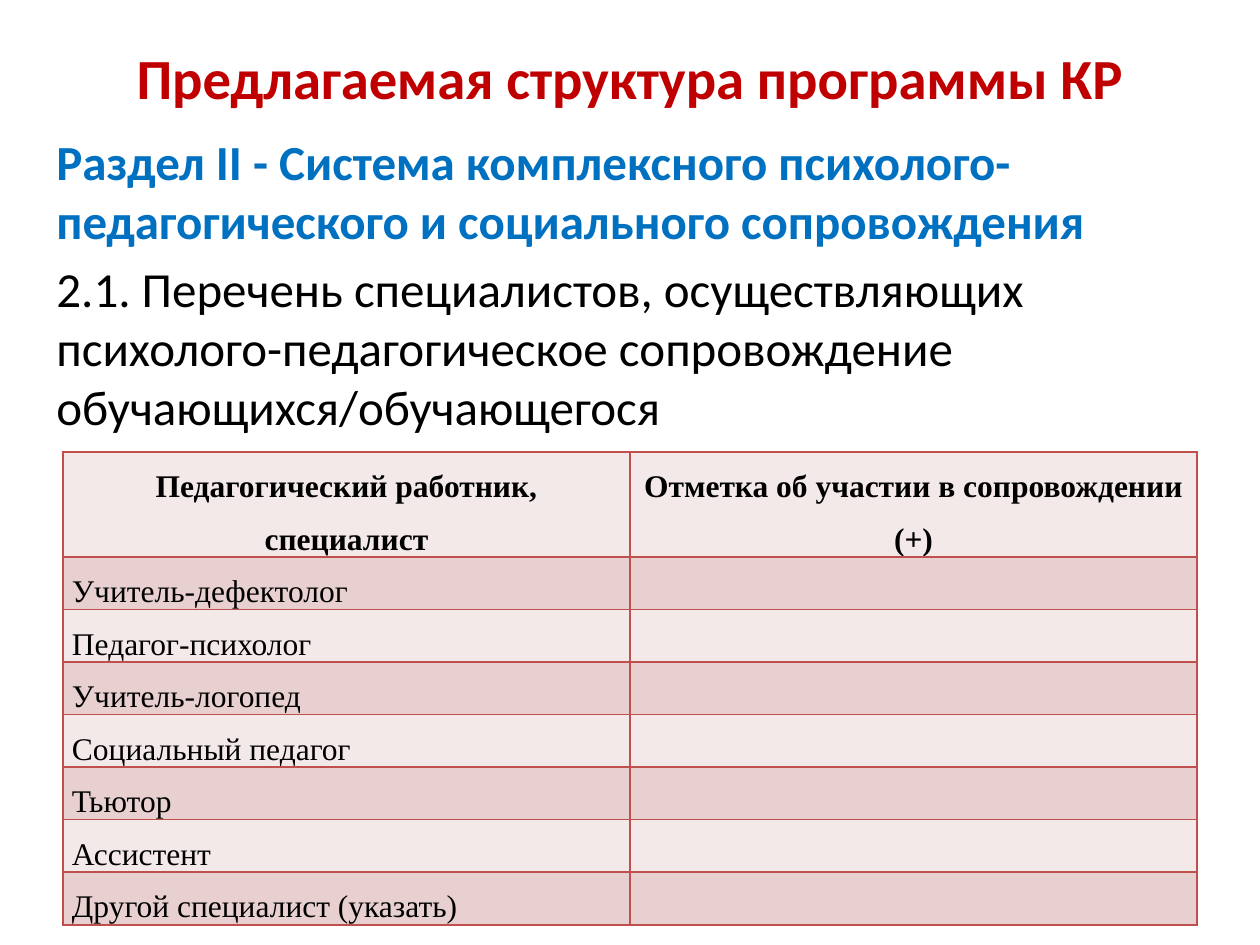
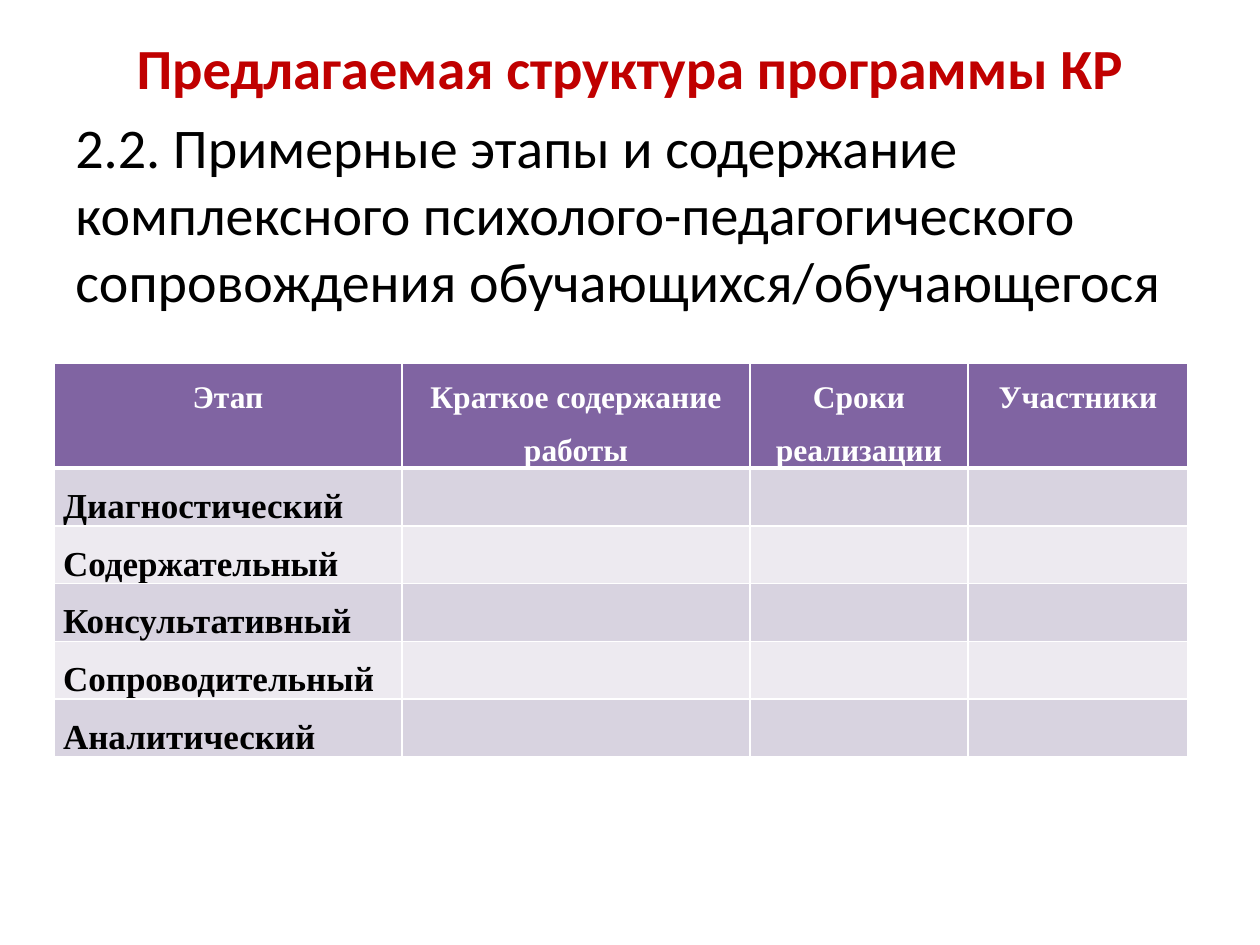
from lxml.etree import SubElement
from pptx import Presentation
from pptx.dml.color import RGBColor
from pptx.enum.text import MSO_ANCHOR, MSO_AUTO_SIZE, PP_ALIGN
from pptx.oxml.ns import qn
from pptx.util import Emu, Pt

COLORS = {
    "title": "C00000", "section": "0070C0", "text": "000000", "white": "FFFFFF",
    "red_line": "C0504D", "red_light": "F4E9E9", "red_band": "E8D0D0",
    "purple": "8064A2", "purple_light": "EDEAF0", "purple_band": "D8D3E0",
}
TITLE = "Предлагаемая структура программы КР"
SLIDES = [
    {
        "title_at": (63, 38, 1134, 77),
        "body_at": (44, 125, 1191, 784),
        "body": [
            ("Раздел II - Cистема комплексного психолого-педагогического и социального сопровождения",
             {"size": 28, "color": "section", "bold": True}),
            ("2.1. Перечень специалистов, осуществляющих психолого-педагогическое "
             "сопровождение обучающихся/обучающегося", {"size": 28}),
        ],
        "table": {
            "at": (63, 452), "columns": [567, 567], "header_height": 104, "row_height": 52,
            "header": ["Педагогический работник, специалист",
                       "Отметка об участии в сопровождении (+)"],
            "rows": ["Учитель-дефектолог", "Педагог-психолог", "Учитель-логопед",
                     "Социальный педагог", "Тьютор", "Ассистент",
                     "Другой специалист (указать)"],
            "header_fill": "red_light", "bands": ["red_band", "red_light"],
            "line": "red_line", "header_line": 1,
            "header_format": {"size": 18, "spacing": Pt(30), "bold": True,
                              "align": PP_ALIGN.CENTER},
            "row_format": {"size": 18, "spacing": Pt(30)},
        },
    },
    {
        "title_at": (63, 38, 1134, 58),
        "body_at": (63, 106, 1134, 804),
        "body": [
            ("2.2. Примерные этапы и содержание комплексного психолого-педагогического "
             "сопровождения обучающихся/обучающегося", {"size": 32}),
        ],
        "table": {
            "at": (54, 363), "columns": [348, 348, 218, 220], "header_height": 104, "row_height": 52,
            "header": ["Этап", "Краткое содержание работы", "Сроки реализации", "Участники"],
            "rows": ["Диагностический", "Содержательный", "Консультативный",
                     "Сопроводительный", "Аналитический"],
            "header_fill": "purple", "bands": ["purple_band", "purple_light"],
            "line": "white", "header_line": 3,
            "header_format": {"size": 18, "spacing": Pt(30), "color": "white", "bold": True,
                              "align": PP_ALIGN.CENTER},
            "row_format": {"size": 20, "spacing": Pt(33), "bold": True,
                           "align": PP_ALIGN.JUSTIFY},
        },
    },
]


def px(length):
    return Emu(round(length * 914400 / 126))


def write(para, text, size, font="Calibri", color="text", bold=False,
          align=PP_ALIGN.LEFT, before=0, spacing=1.0):
    para.alignment = align
    para.space_before = Pt(before)
    para.line_spacing = spacing
    span = para.add_run()
    span.text = text
    span.font.size = Pt(size)
    span.font.name = font
    span.font.bold = bold
    span.font.color.rgb = RGBColor.from_string(COLORS[color])


def add_title(slide, place):
    title = slide.shapes.title
    title.left, title.top, title.width, title.height = map(px, place)
    frame = title.text_frame
    frame.auto_size = MSO_AUTO_SIZE.NONE
    frame.vertical_anchor = MSO_ANCHOR.MIDDLE
    write(frame.paragraphs[0], TITLE, 32.4, color="title", bold=True, align=PP_ALIGN.CENTER)


def add_body(slide, place, paragraphs):
    frame = slide.shapes.add_textbox(*map(px, place)).text_frame
    frame.word_wrap = True
    for index, (text, style) in enumerate(paragraphs):
        para = frame.add_paragraph() if index else frame.paragraphs[0]
        write(para, text, before=style["size"] * 0.2, **style)


def set_borders(cell, color, top, bottom):
    properties = cell._tc.get_or_add_tcPr()
    for side, width in (("L", 1), ("R", 1), ("T", top), ("B", bottom)):
        line = SubElement(properties, qn(f"a:ln{side}"), w=str(Pt(width)))
        fill = SubElement(line, qn("a:solidFill"))
        SubElement(fill, qn("a:srgbClr"), val=COLORS[color])


def add_table(slide, data):
    columns = data["columns"]
    blanks = [""] * (len(columns) - 1)
    grid = [data["header"]] + [[name] + blanks for name in data["rows"]]
    heights = [data["header_height"]] + [data["row_height"]] * len(data["rows"])
    place = (*data["at"], sum(columns), sum(heights))
    table = slide.shapes.add_table(len(grid), len(columns), *map(px, place)).table
    for column, width in zip(table.columns, columns):
        column.width = px(width)
    for index, texts in enumerate(grid):
        table.rows[index].height = px(heights[index])
        fill = data["bands"][(index - 1) % 2] if index else data["header_fill"]
        style = data["row_format"] if index else data["header_format"]
        top = data["header_line"] if index == 1 else 1
        bottom = 1 if index else data["header_line"]
        for cell, text in zip(table.rows[index].cells, texts):
            set_borders(cell, data["line"], top, bottom)
            cell.fill.solid()
            cell.fill.fore_color.rgb = RGBColor.from_string(COLORS[fill])
            cell.margin_left = cell.margin_right = px(9)
            cell.margin_top = cell.margin_bottom = 0
            if text:
                write(cell.text_frame.paragraphs[0], text, font="Times New Roman", **style)


def main():
    deck = Presentation()
    deck.slide_width, deck.slide_height = px(1260), px(945)
    for content in SLIDES:
        slide = deck.slides.add_slide(deck.slide_layouts[5])
        add_title(slide, content["title_at"])
        add_body(slide, content["body_at"], content["body"])
        add_table(slide, content["table"])
    deck.save("out.pptx")


if __name__ == "__main__":
    main()
